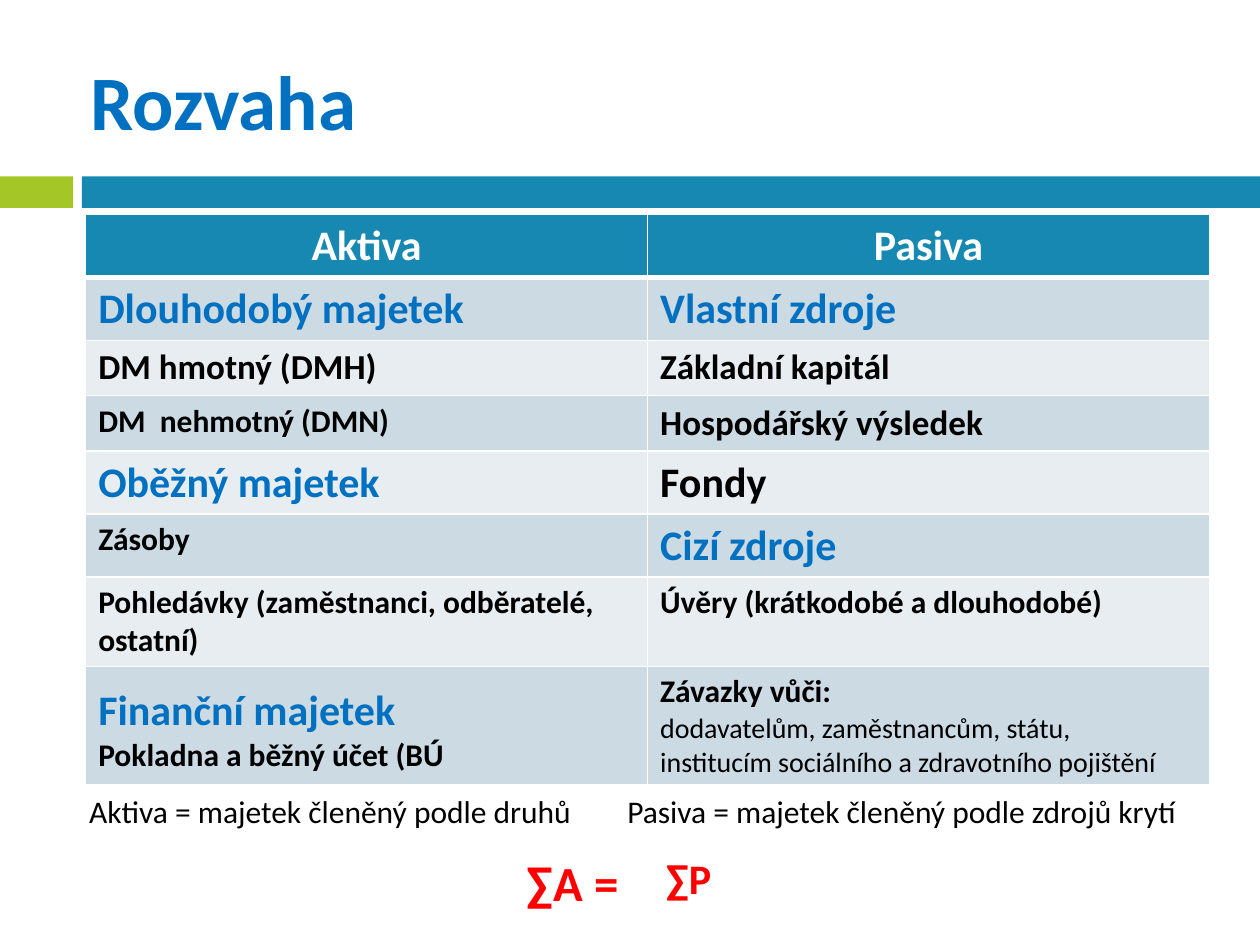
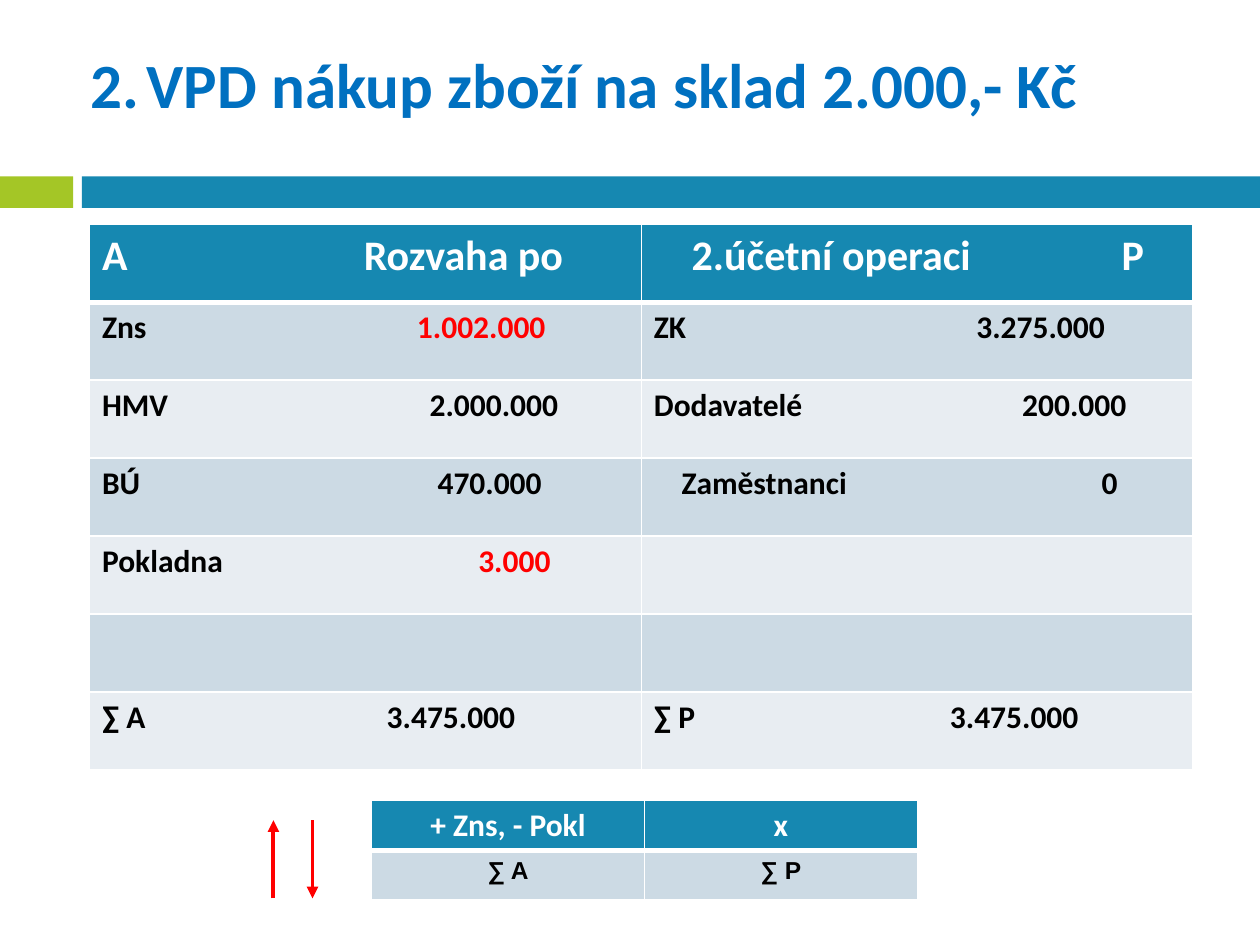
from dataclasses import dataclass
from typing import NamedTuple

import lxml.etree
import pptx
import pptx.dml.color
import pptx.enum.shapes
import pptx.enum.text
import pptx.oxml.ns
import pptx.slide
import pptx.table
import pptx.text.text
import pptx.util

RGBColor = pptx.dml.color.RGBColor
TEAL = RGBColor(0x16, 0x88, 0xB1)
LIME = RGBColor(0xA4, 0xC6, 0x26)
BLUE = RGBColor(0x00, 0x70, 0xC0)
RED = RGBColor(0xFF, 0x00, 0x00)
BLACK = RGBColor(0x00, 0x00, 0x00)
WHITE = RGBColor(0xFF, 0xFF, 0xFF)
STRIPES = (RGBColor(0xE8, 0xED, 0xF2), RGBColor(0xCC, 0xDA, 0xE4))

SLIDE_WIDTH = pptx.util.Inches(10)
SLIDE_HEIGHT = pptx.util.Inches(7.5)
GRID_COLUMNS = 100
CENTER = pptx.enum.text.PP_ALIGN.CENTER
LEFT = pptx.enum.text.PP_ALIGN.LEFT
TOP = pptx.enum.text.MSO_ANCHOR.TOP
MIDDLE = pptx.enum.text.MSO_ANCHOR.MIDDLE
qualified = pptx.oxml.ns.qn


class Box(NamedTuple):
    left: float
    top: float
    width: float
    height: float


class Tab(NamedTuple):
    position: float
    alignment: str = "r"


@dataclass(frozen=True)
class Run:
    text: str
    size: float = 18
    color: RGBColor = BLACK
    bold: bool = True
    font: str = "Calibri"


@dataclass(frozen=True)
class Line:
    runs: tuple[Run, ...]
    alignment: pptx.enum.text.PP_ALIGN = LEFT
    tabs: tuple[Tab, ...] = ()


@dataclass(frozen=True)
class Cell:
    lines: tuple[Line, ...] = ()
    margin_top: float = 0.5


@dataclass(frozen=True)
class Arrow:
    column: float
    start: float
    end: float


BANDS = ((Box(0, 14, 5.8, 2.5), LIME), (Box(6.5, 14, 93.5, 2.5), TEAL))
ARROWS = (Arrow(24.8, 65.1, 71.3), Arrow(21.7, 71.3, 65.1))


def grid(units: float) -> pptx.util.Emu:
    return pptx.util.Emu(round(units * SLIDE_WIDTH / GRID_COLUMNS))


def place(box: Box) -> tuple[pptx.util.Emu, ...]:
    return tuple(grid(length) for length in box)


def write_lines(frame: pptx.text.text.TextFrame, lines: tuple[Line, ...]) -> None:
    for index, line in enumerate(lines):
        paragraph = frame.add_paragraph() if index else frame.paragraphs[0]
        paragraph.alignment = line.alignment
        if line.tabs:
            properties = paragraph._p.get_or_add_pPr()
            stops = lxml.etree.SubElement(properties, qualified("a:tabLst"))
            for tab in line.tabs:
                lxml.etree.SubElement(stops, qualified("a:tab"),
                                      pos=str(grid(tab.position)), algn=tab.alignment)
        for part in line.runs:
            run = paragraph.add_run()
            run.text = part.text
            run.font.name = part.font
            run.font.size = pptx.util.Pt(part.size)
            run.font.bold = part.bold
            run.font.color.rgb = part.color


def add_text(slide: pptx.slide.Slide, box: Box, line: Line,
             anchor: pptx.enum.text.MSO_ANCHOR = TOP, side_margin: float = 1) -> None:
    frame = slide.shapes.add_textbox(*place(box)).text_frame
    frame.word_wrap = True
    frame.vertical_anchor = anchor
    frame.margin_left = frame.margin_right = grid(side_margin)
    write_lines(frame, (line,))


def add_borders(cell: pptx.table._Cell, row: int) -> None:
    properties = cell._tc.get_or_add_tcPr()
    widths = {"L": 1, "R": 1, "T": 3 if row == 1 else 1, "B": 3 if row == 0 else 1}
    for side, width in widths.items():
        border = lxml.etree.SubElement(properties, qualified(f"a:ln{side}"),
                                       w=str(pptx.util.Pt(width)))
        fill = lxml.etree.SubElement(border, qualified("a:solidFill"))
        lxml.etree.SubElement(fill, qualified("a:srgbClr"), val=str(WHITE))


def add_grid_table(slide: pptx.slide.Slide, box: Box, rows: tuple[tuple[Cell, ...], ...],
                   heights: tuple[float, ...]) -> None:
    table = slide.shapes.add_table(len(rows), len(rows[0]), *place(box)).table
    table.first_row = table.horz_banding = False
    for column in table.columns:
        column.width = grid(box.width / len(rows[0]))
    for row_index, (row, height) in enumerate(zip(rows, heights)):
        table.rows[row_index].height = grid(height)
        for column_index, content in enumerate(row):
            cell = table.cell(row_index, column_index)
            add_borders(cell, row_index)
            cell.fill.solid()
            cell.fill.fore_color.rgb = STRIPES[row_index % 2] if row_index else TEAL
            cell.margin_top = grid(content.margin_top)
            write_lines(cell.text_frame, content.lines)


def add_arrow(slide: pptx.slide.Slide, arrow: Arrow) -> None:
    connector = slide.shapes.add_connector(
        pptx.enum.shapes.MSO_CONNECTOR.STRAIGHT,
        *(grid(units) for units in (arrow.column, arrow.start, arrow.column, arrow.end)))
    connector.line.color.rgb = RED
    connector.line.width = pptx.util.Pt(2.25)
    properties = connector._element.spPr
    outline = properties.find(qualified("a:ln"))
    lxml.etree.SubElement(outline, qualified("a:tailEnd"), type="triangle")
    lxml.etree.SubElement(properties, qualified("a:effectLst"))


def add_base_slide(presentation: pptx.Presentation, title: Line,
                   title_top: float) -> pptx.slide.Slide:
    slide = presentation.slides.add_slide(presentation.slide_layouts[6])
    for box, color in BANDS:
        band = slide.shapes.add_shape(pptx.enum.shapes.MSO_SHAPE.RECTANGLE, *place(box))
        band.shadow.inherit = False
        band.fill.solid()
        band.fill.fore_color.rgb = color
        band.line.fill.background()
    add_text(slide, Box(6.7, title_top, 89.2, 10.8), title, MIDDLE, 0.5)
    return slide


def single(text: str, size: float = 18, color: RGBColor = BLACK,
           alignment: pptx.enum.text.PP_ALIGN = LEFT, font: str = "Calibri") -> Cell:
    return Cell((Line((Run(text, size, color, font=font),), alignment),))


def header(text: str, size: float = 24) -> Cell:
    return single(text, size, WHITE, CENTER)


def heading(text: str) -> Cell:
    return single(text, 24, BLUE)


def entry(label: str, amount: str, end: float, color: RGBColor = BLACK,
          size: float = 18, label_color: RGBColor = BLACK, indent: float = 0) -> Cell:
    tabs = (Tab(indent, "l"),) if indent else ()
    lead = "\t" if indent else ""
    runs = (Run(f"{lead}{label}\t", size, label_color), Run(amount, size, color))
    return Cell((Line(runs, tabs=tabs + (Tab(end),)),))


def build_balance_sheet(presentation: pptx.Presentation) -> None:
    slide = add_base_slide(presentation, Line((Run("Rozvaha", 44, BLUE),)), 2.5)
    financial_assets = Cell((
        Line((Run("Finanční majetek", 24, BLUE),)),
        Line((Run("Pokladna a běžný účet (BÚ"),)),
    ), 1.5)
    liabilities = Cell((
        Line((Run("Závazky vůči:"),)),
        Line((Run("dodavatelům, zaměstnancům, státu,", 16, bold=False),)),
        Line((Run("institucím sociálního a zdravotního pojištění", 16, bold=False),)),
    ))
    rows = (
        (header("Aktiva"), header("Pasiva")),
        (heading("Dlouhodobý majetek"), heading("Vlastní zdroje")),
        (single("DM hmotný (DMH)", 20), single("Základní kapitál", 20)),
        (single("DM  nehmotný (DMN)"), single("Hospodářský výsledek", 20)),
        (heading("Oběžný majetek"), single("Fondy", 24)),
        (single("Zásoby"), heading("Cizí zdroje")),
        (single("Pohledávky (zaměstnanci, odběratelé, ostatní)"),
         single("Úvěry (krátkodobé a dlouhodobé)")),
        (financial_assets, liabilities),
    )
    add_grid_table(slide, Box(6.8, 17, 89.2, 45.6), rows, (5, 5, 4.4, 4.4, 5, 5, 7.1, 9.4))
    definitions = ("Aktiva = majetek členěný podle druhů\t"
                   "Pasiva = majetek členěný podle zdrojů krytí")
    add_text(slide, Box(6.1, 62.4, 89.8, 4),
             Line((Run(definitions, bold=False),), tabs=(Tab(42.7, "l"),)))
    add_text(slide, Box(36.8, 67.2, 17.3, 5.7), Line((Run("∑A =", 28, RED),), CENTER))
    add_text(slide, Box(50.1, 67.2, 9.1, 5), Line((Run("∑P", 24, RED),), CENTER))


def build_purchase(presentation: pptx.Presentation) -> None:
    title = Line((Run("2.", 36, BLUE), Run(" ", 18, BLUE),
                  Run("VPD nákup zboží na sklad 2.000,- Kč", 36, BLUE)))
    slide = add_base_slide(presentation, title, 1.2)
    rows = (
        (entry("A", "Rozvaha po", 36.6, WHITE, 24, WHITE),
         entry("2.účetní operaci", "P", 38.9, WHITE, 24, WHITE, 3)),
        (entry("Zns", "1.002.000", 35.2, RED), entry("ZK", "3.275.000", 35.8)),
        (entry("HMV", "2.000.000", 36.2), entry("Dodavatelé", "200.000", 37.5)),
        (entry("BÚ", "470.000", 34.9), entry("Zaměstnanci", "0", 36.8, indent=2.2)),
        (entry("Pokladna", "3.000", 35.6, RED), Cell()),
        (Cell(), Cell()),
        (entry("∑ A", "3.475.000", 32.8), entry("∑ P", "3.475.000", 33.7)),
    )
    add_grid_table(slide, Box(7.1, 17.8, 87.6, 43.3), rows, (6.19,) * len(rows))
    changes = (
        (header("+ Zns, - Pokl", 18), header("x", 18)),
        tuple(single(total, 14, alignment=CENTER, font="Arial") for total in ("∑ A", "∑ P")),
    )
    add_grid_table(slide, Box(29.5, 63.5, 43.3, 7.8), changes, (3.9,) * len(changes))
    for arrow in ARROWS:
        add_arrow(slide, arrow)


def main() -> None:
    presentation = pptx.Presentation()
    presentation.slide_width = SLIDE_WIDTH
    presentation.slide_height = SLIDE_HEIGHT
    build_balance_sheet(presentation)
    build_purchase(presentation)
    presentation.save("out.pptx")


if __name__ == "__main__":
    main()
